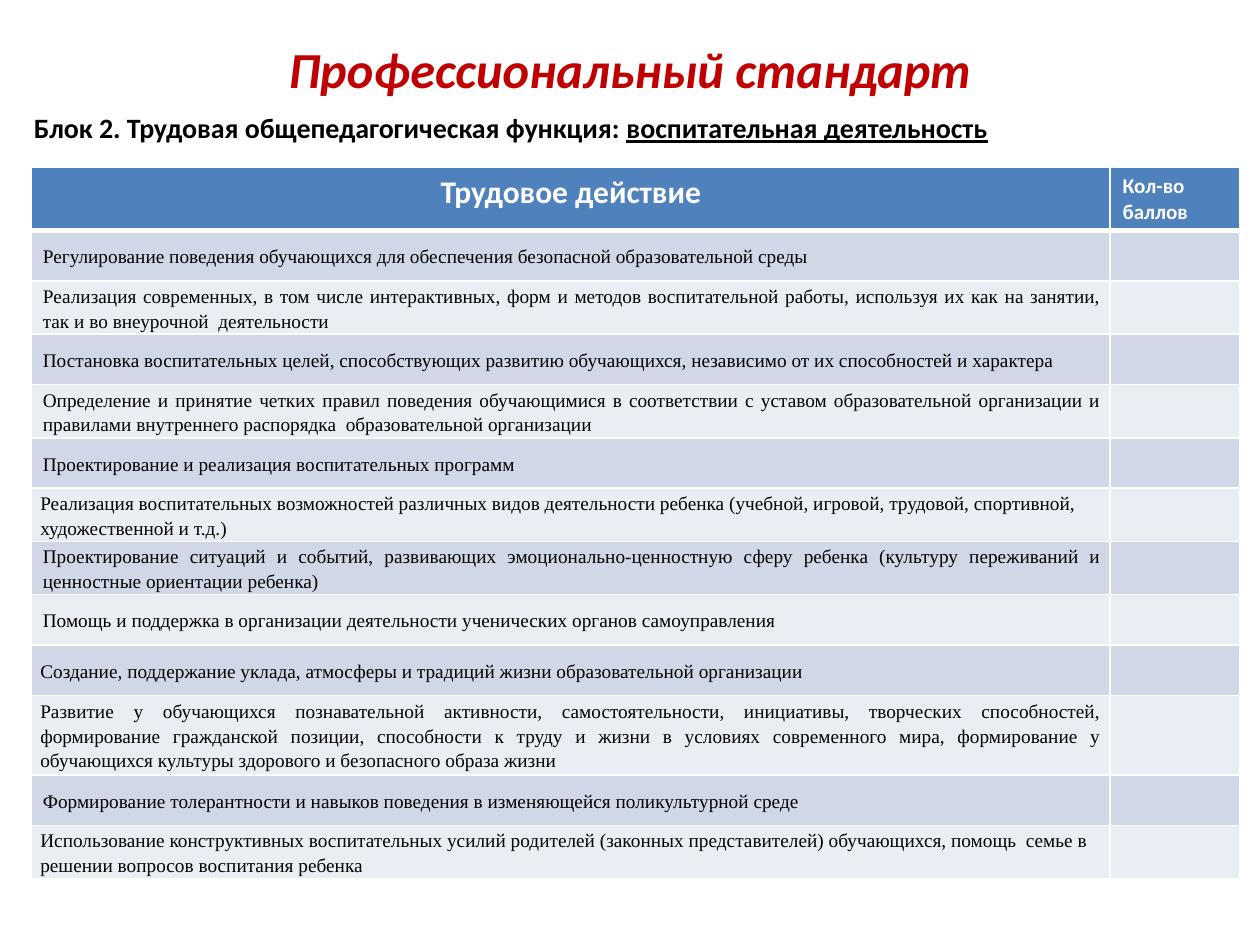
from lxml.etree import SubElement
from pptx import Presentation
from pptx.dml.color import RGBColor
from pptx.enum.text import MSO_ANCHOR as Anchor, PP_ALIGN as Align
from pptx.oxml.ns import qn
from pptx.util import Inches, Pt

RED = RGBColor(0xC0, 0x00, 0x00)
BLACK = RGBColor(0x00, 0x00, 0x00)
WHITE = RGBColor(0xFF, 0xFF, 0xFF)
HEADER_BLUE = RGBColor(0x4F, 0x81, 0xBD)
BANDS = (RGBColor(0xD0, 0xD8, 0xE8), RGBColor(0xE9, 0xED, 0xF4))

# Each action: wording, alignment, left indent in inches
ACTIONS = [
    ("Регулирование поведения обучающихся для обеспечения безопасной "
     "образовательной среды", Align.JUSTIFY, 0.02),
    ("Реализация современных, в том числе интерактивных, форм и методов "
     "воспитательной работы, используя их как на занятии, так и во "
     "внеурочной  деятельности", Align.JUSTIFY, 0.02),
    ("Постановка воспитательных целей, способствующих развитию обучающихся, "
     "независимо от их способностей и характера", Align.JUSTIFY, 0.02),
    ("Определение и принятие четких правил поведения обучающимися в "
     "соответствии с уставом образовательной организации и правилами "
     "внутреннего распорядка  образовательной организации",
     Align.JUSTIFY, 0.02),
    ("Проектирование и реализация воспитательных программ",
     Align.JUSTIFY, 0.02),
    ("Реализация воспитательных возможностей различных видов деятельности "
     "ребенка (учебной, игровой, трудовой, спортивной, художественной "
     "и т.д.)", Align.LEFT, 0),
    ("Проектирование ситуаций и событий, развивающих эмоционально-ценностную "
     "сферу ребенка (культуру переживаний и ценностные ориентации ребенка)",
     Align.JUSTIFY, 0.02),
    ("Помощь и поддержка в организации деятельности ученических органов "
     "самоуправления", Align.JUSTIFY, 0.02),
    ("Создание, поддержание уклада, атмосферы и традиций жизни "
     "образовательной организации", Align.JUSTIFY, 0),
    ("Развитие у обучающихся познавательной активности, самостоятельности, "
     "инициативы, творческих способностей, формирование гражданской позиции, "
     "способности к труду и жизни в условиях современного мира, формирование "
     "у обучающихся культуры здорового и безопасного образа жизни",
     Align.JUSTIFY, 0),
    ("Формирование толерантности и навыков поведения в изменяющейся "
     "поликультурной среде", Align.JUSTIFY, 0.02),
    ("Использование конструктивных воспитательных усилий родителей (законных "
     "представителей) обучающихся, помощь  семье в решении вопросов "
     "воспитания ребенка", Align.LEFT, 0),
]
LONGEST_ACTION = 10  # table row with three lines of text


class StandardSlide:
    heading_font = "Calibri"
    action_font = "Times New Roman"

    def __init__(self, deck):
        self.slide = deck.slides.add_slide(deck.slide_layouts[6])

    def style(self, run, size, color, font=heading_font, bold=True):
        run.font.name = font
        run.font.size = Pt(size)
        run.font.bold = bold
        run.font.color.rgb = color

    def indent(self, paragraph, left, first=0):
        properties = paragraph._p.get_or_add_pPr()
        properties.set("marL", str(Inches(left)))
        properties.set("indent", str(Inches(first)))

    def text(self, left, top, width, height, parts, size, color, anchor):
        box = self.slide.shapes.add_textbox(
            Inches(left), Inches(top), Inches(width), Inches(height))
        box.text_frame.word_wrap = True
        box.text_frame.vertical_anchor = anchor
        paragraph = box.text_frame.paragraphs[0]
        for part in parts:
            run = paragraph.add_run()
            run.text = part
            self.style(run, size, color)
        return paragraph

    def table(self, left, top, widths, heights):
        table = self.slide.shapes.add_table(
            len(heights), len(widths), Inches(left), Inches(top),
            Inches(sum(widths)), Inches(sum(heights))).table
        for column, width in zip(table.columns, widths):
            column.width = Inches(width)
        for row, height in zip(table.rows, heights):
            row.height = Inches(height)
        return table

    def cell(self, cell, fill, bottom=1, top=1):
        properties = cell._tc.get_or_add_tcPr()
        for side, width in (("L", 1), ("R", 1), ("T", top), ("B", bottom)):
            line = SubElement(properties, qn(f"a:ln{side}"), w=str(Pt(width)))
            paint = SubElement(line, qn("a:solidFill"))
            SubElement(paint, qn("a:srgbClr"), val=str(WHITE))
        cell.fill.solid()
        cell.fill.fore_color.rgb = fill

    def header(self, cell, text, size, align):
        self.cell(cell, HEADER_BLUE, bottom=3)
        cell.text_frame.text = text
        paragraph = cell.text_frame.paragraphs[0]
        paragraph.alignment = align
        self.style(paragraph.runs[0], size, WHITE)

    def action(self, cell, text, align, left):
        cell.vertical_anchor = Anchor.MIDDLE
        cell.margin_left = cell.margin_right = Inches(0.07)
        cell.margin_top = cell.margin_bottom = 0
        cell.text_frame.text = text
        paragraph = cell.text_frame.paragraphs[0]
        paragraph.alignment = align
        paragraph.line_spacing = 1.15
        self.indent(paragraph, left)
        self.style(paragraph.runs[0], 11, BLACK, self.action_font, False)


def main():
    deck = Presentation()
    deck.slide_width, deck.slide_height = Inches(10), Inches(7.5)
    page = StandardSlide(deck)

    # Title
    title = page.text(0.5, 0.33, 9, 0.42, ["Профессиональный стандарт"],
                      28.8, RED, Anchor.MIDDLE)
    title.alignment = Align.CENTER
    title.runs[0].font.italic = True

    # Block heading
    block = page.text(0.17, 0.83, 9.67, 5.42,
                      ["Блок 2. Трудовая общепедагогическая функция: ",
                       "воспитательная деятельность"],
                      16, BLACK, Anchor.TOP)
    block.space_before = Pt(3.2)
    page.indent(block, 0.38, -0.38)
    block.runs[1].font.underline = True

    # Score table
    heights = [0.5] + [0.4] * len(ACTIONS)
    heights[LONGEST_ACTION] = 0.59
    scores = page.table(0.25, 1.33, [8.56, 1.03], heights)
    page.header(scores.cell(0, 0), "Трудовое действие", 18, Align.CENTER)
    page.header(scores.cell(0, 1), "Кол-во баллов", 12, Align.LEFT)
    for row, (text, align, left) in enumerate(ACTIONS, start=1):
        for column in range(2):
            page.cell(scores.cell(row, column), BANDS[(row - 1) % 2],
                      top=3 if row == 1 else 1)
        page.action(scores.cell(row, 0), text, align, left)

    deck.save("out.pptx")


if __name__ == "__main__":
    main()
